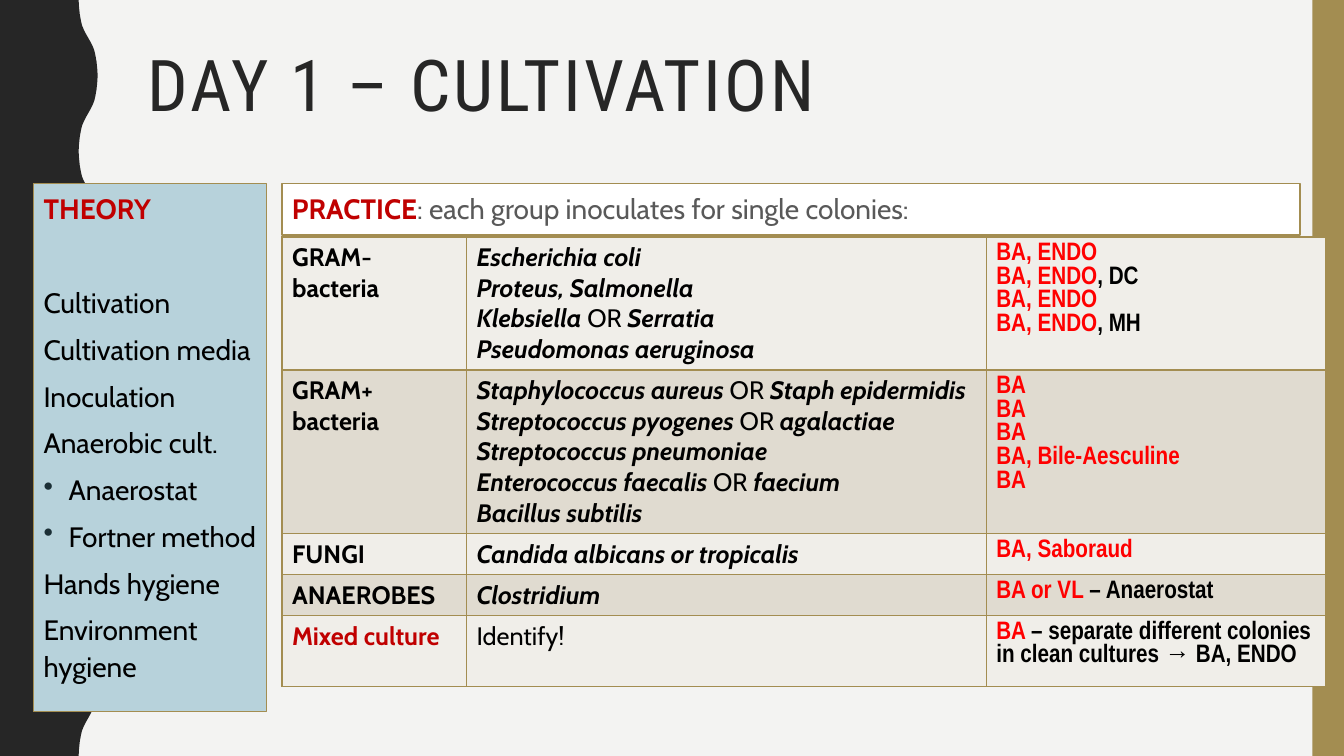
from lxml.etree import SubElement
from pptx import Presentation
from pptx.dml.color import RGBColor
from pptx.enum.shapes import MSO_SHAPE
from pptx.enum.text import MSO_ANCHOR, PP_ALIGN
from pptx.oxml.ns import qn
from pptx.util import Pt

INK, GOLD, CRIMSON, RED, BLACK = "262626", "A38D51", "C00000", "FF0000", "000000"
BANDS = ("F0EEE9", "E0DBD0")

TITLE = {"name": "Roboto Condensed", "size": Pt(51), "color": INK}
BODY = {"name": "Cabin", "size": Pt(20), "bold": False, "color": BLACK}
HEADING = {**BODY, "bold": True, "color": CRIMSON}
PLAIN = {**BODY, "size": Pt(18)}
GROUP = {**PLAIN, "bold": True}
SPECIES = {**GROUP, "italic": True}
MEDIA = {**GROUP, "name": "Arial Narrow"}
BASIC = {**MEDIA, "color": RED}


def rgb(value):
    """Turn a hex string into a colour."""
    return RGBColor.from_string(value)


class CultivationSlide:
    """Draw the elements of one slide in a shared style."""

    def __init__(self, slide, line_color, line_width):
        """Keep the slide and the outline style."""
        self.slide = slide
        self.line_color = line_color
        self.line_width = line_width

    def paint(self, shape, fill, outlined=False):
        """Fill a shape and set its outline."""
        shape.shadow.inherit = False
        shape.fill.solid()
        shape.fill.fore_color.rgb = rgb(fill)
        if outlined:
            shape.line.color.rgb = rgb(self.line_color)
            shape.line.width = Pt(self.line_width)
        else:
            shape.line.fill.background()

    def panel(self, bounds, fill, outlined=False):
        """Add a rectangle."""
        rectangle = self.slide.shapes.add_shape(MSO_SHAPE.RECTANGLE, *map(Pt, bounds))
        self.paint(rectangle, fill, outlined)
        return rectangle

    def outline(self, points, fill):
        """Add a closed polygon."""
        corners = [(Pt(x), Pt(y)) for x, y in points]
        builder = self.slide.shapes.build_freeform(*corners[0], scale=1.0)
        builder.add_line_segments(corners[1:], close=True)
        self.paint(builder.convert_to_shape(), fill)

    def add_runs(self, paragraph, pieces):
        """Add formatted runs to a paragraph."""
        for words, style in pieces:
            run = paragraph.add_run()
            run.text = words
            for attribute, value in style.items():
                if attribute == "color":
                    run.font.color.rgb = rgb(value)
                else:
                    setattr(run.font, attribute, value)

    def add_lines(self, frame, lines, anchor=MSO_ANCHOR.TOP, **layout):
        """Add one paragraph for each list of runs."""
        frame.word_wrap = True
        frame.vertical_anchor = anchor
        for index, pieces in enumerate(lines):
            paragraph = frame.paragraphs[0] if index == 0 else frame.add_paragraph()
            for attribute, value in {"alignment": PP_ALIGN.LEFT, **layout}.items():
                if index or attribute != "space_before":
                    setattr(paragraph, attribute, value)
            self.add_runs(paragraph, pieces)
        return frame.paragraphs

    def title(self, bounds, words):
        """Add the slide title with spaced letters."""
        box = self.slide.shapes.add_textbox(*map(Pt, bounds))
        heading, = self.add_lines(box.text_frame, [[(words, TITLE)]], MSO_ANCHOR.MIDDLE,
                                  line_spacing=0.9)
        heading.runs[0]._r.get_or_add_rPr().set("spc", "200")

    def bullet(self, paragraph, color):
        """Give a paragraph a hanging bullet."""
        properties = paragraph._p.get_or_add_pPr()
        properties.set("marL", str(Pt(18)))
        properties.set("indent", str(-Pt(18)))
        SubElement(SubElement(properties, qn("a:buClr")), qn("a:srgbClr"), val=color)
        SubElement(properties, qn("a:buChar"), char="•")

    def border(self, cell):
        """Draw the four borders of a cell."""
        properties = cell._tc.get_or_add_tcPr()
        for side in ("lnL", "lnR", "lnT", "lnB"):
            edge = SubElement(properties, qn(f"a:{side}"), w=str(Pt(self.line_width)))
            SubElement(SubElement(edge, qn("a:solidFill")), qn("a:srgbClr"),
                       val=self.line_color)

    def table(self, left, top, widths, heights, rows):
        """Add a banded table of rich text."""
        grid = self.slide.shapes.add_table(
            len(rows), len(widths), Pt(left), Pt(top),
            Pt(sum(widths)), Pt(sum(heights))).table
        for column, width in zip(grid.columns, widths):
            column.width = Pt(width)
        for index, (row, height, contents) in enumerate(zip(grid.rows, heights, rows)):
            row.height = Pt(height)
            for cell, lines in zip(row.cells, contents):
                self.border(cell)
                cell.fill.solid()
                cell.fill.fore_color.rgb = rgb(BANDS[index % 2])
                self.add_lines(cell.text_frame, lines)


def wave_points():
    """Return the outline of the wavy left edge."""
    quarter = [(56.2, 0), (56.5, 5), (57, 10), (57.8, 14.5), (58.6, 18),
               (59.8, 21), (61.3, 24), (63, 27)]
    half = quarter + [(126 - x, 54 - y) for x, y in quarter[-2::-1]]
    period = half + [(x, 108 - y) for x, y in half[-2::-1]]
    edge = [(x, y + 108 * turn) for turn in range(5) for x, y in period]
    return [(0, 0), *edge, (0, 540)]


def either(first, second):
    """Return the runs for two alternative species."""
    return [(first + " ", SPECIES), ("OR ", PLAIN), (second, SPECIES)]


def species(*names):
    """Return one line for each species."""
    return [[(name, SPECIES)] for name in names]


def media(*lines):
    """Return lines of basic media, each with an optional black ending."""
    return [[(basic, BASIC), (extra, MEDIA)] if extra else [(basic, BASIC)]
            for basic, extra in lines]


def main():
    """Build and save the slide."""
    deck = Presentation()
    deck.slide_width, deck.slide_height = Pt(960), Pt(540)
    slide = deck.slides.add_slide(deck.slide_layouts[6])
    slide.background.fill.solid()
    slide.background.fill.fore_color.rgb = rgb("F3F3F2")
    page = CultivationSlide(slide, GOLD, 1)

    page.outline(wave_points(), INK)
    page.panel((937.5, 0, 22.5, 540), GOLD)
    page.title((98.6, 30.2, 801.4, 66.2), "DAY 1 – CULTIVATION")

    topics = ["Cultivation", "Cultivation media", "Inoculation", "Anaerobic cult.",
              "Anaerostat", "Fortner method", "Hands hygiene", "Environment hygiene"]
    spacing = {"line_spacing": 1.1, "space_before": Pt(7)}
    theory = page.panel((24, 131.2, 166.3, 377.3), "B7D2DB", outlined=True).text_frame
    theory.margin_right = Pt(5)
    entries = page.add_lines(theory, [[("THEORY", HEADING)],
                                      *([(topic, BODY)] for topic in topics)], **spacing)
    entries[1].space_before = Pt(40.5)
    for method in entries[5:7]:
        page.bullet(method, "1B2F36")

    practice = page.panel((201.5, 131.2, 727, 36.8), "FFFFFF", outlined=True)
    page.add_lines(practice.text_frame, [[
        ("PRACTICE", HEADING),
        (": each group inoculates for single colonies:", {**BODY, "color": "595959"}),
    ]], **spacing)

    inoculations = [
        ([[("GRAM- bacteria", GROUP)]],
         [*species("Escherichia coli", "Proteus, Salmonella"),
          either("Klebsiella", "Serratia"), *species("Pseudomonas aeruginosa")],
         media(("BA, ENDO", ""), ("BA, ENDO", ", DC"),
               ("BA, ENDO", ""), ("BA, ENDO", ", MH"))),
        ([[("GRAM+ bacteria", GROUP)]],
         [either("Staphylococcus aureus", "Staph epidermidis"),
          either("Streptococcus pyogenes", "agalactiae"),
          *species("Streptococcus pneumoniae"),
          either("Enterococcus faecalis", "faecium"), *species("Bacillus subtilis")],
         media(("BA", ""), ("BA", ""), ("BA", ""), ("BA, Bile-Aesculine", ""), ("BA", ""))),
        ([[("FUNGI", GROUP)]], species("Candida albicans or tropicalis"),
         media(("BA, Saboraud", ""))),
        ([[("ANAEROBES", GROUP)]], species("Clostridium"),
         media(("BA or VL ", "– Anaerostat"))),
        ([[("Mixed culture", {**GROUP, "color": CRIMSON})]], [[("Identify!", PLAIN)]],
         media(("BA ", "– separate different colonies in clean cultures → BA, ENDO"))),
    ]
    page.table(201.5, 169.3, (131.8, 371.2, 242.7), (95, 117, 29.3, 29.3, 41), inoculations)
    deck.save("out.pptx")


if __name__ == "__main__":
    main()
